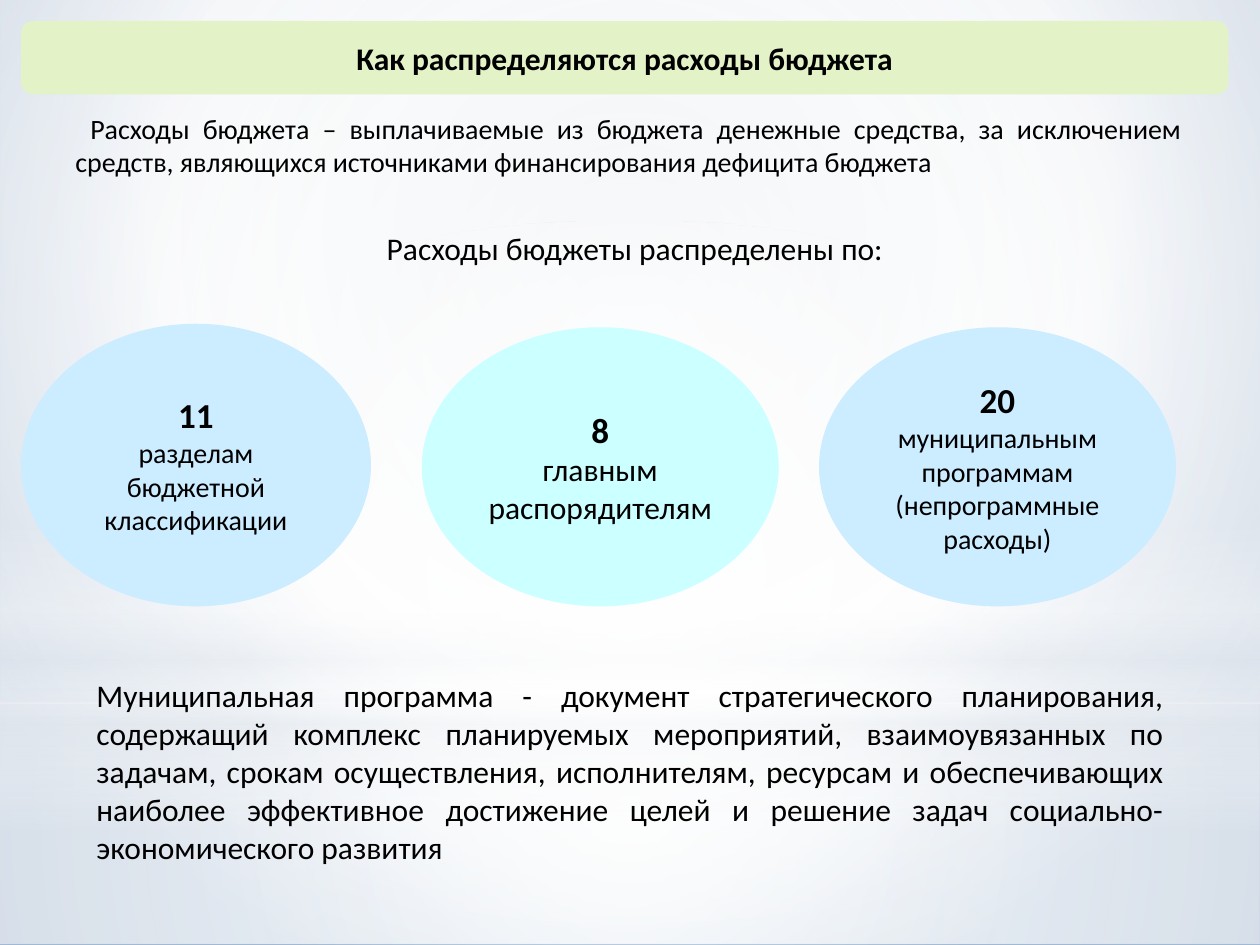
from lxml import etree
from pptx import Presentation
from pptx.dml.color import RGBColor
from pptx.enum import shapes, text
from pptx.oxml import ns
from pptx.util import Pt

BLACK = RGBColor(0x00, 0x00, 0x00)
LIME = RGBColor(0xE3, 0xF2, 0xC7)
SKY = RGBColor(0xCC, 0xEC, 0xFF)
AQUA = RGBColor(0xCC, 0xFF, 0xFF)
WHITE = RGBColor(0xFF, 0xFF, 0xFF)
MIST = RGBColor(0xE4, 0xE9, 0xEF)
HAZE = RGBColor(0xD7, 0xDF, 0xE7)
STEEL = RGBColor(0xA2, 0xB9, 0xD3)

FONT = "Calibri"
SHAPE = shapes.MSO_SHAPE
ALIGN = text.PP_ALIGN
CENTRE = (50, 50, 50, 50)


def set_gradient(fill, owner, stops, focus=CENTRE):
    """Stops are (position %, colour, opacity %); focus None means top to bottom."""
    fill.gradient()
    grad = next(owner.iter(ns.qn("a:gradFill")))
    for child in list(grad):
        grad.remove(child)
    stop_list = etree.SubElement(grad, ns.qn("a:gsLst"))
    for position, colour, opacity in stops:
        stop = etree.SubElement(stop_list, ns.qn("a:gs"), pos=str(position * 1000))
        tint = etree.SubElement(stop, ns.qn("a:srgbClr"), val=str(colour))
        if opacity < 100:
            etree.SubElement(tint, ns.qn("a:alpha"), val=str(opacity * 1000))
    if focus is None:
        etree.SubElement(grad, ns.qn("a:lin"), ang="5400000", scaled="0")
    else:
        circle = etree.SubElement(grad, ns.qn("a:path"), path="circle")
        sides = {side: str(share * 1000) for side, share in zip("ltrb", focus)}
        etree.SubElement(circle, ns.qn("a:fillToRect"), **sides)


def add_plain_shape(slide, kind, box):
    shape = slide.shapes.add_shape(kind, *map(Pt, box))
    shape.shadow.inherit = False
    shape.line.fill.background()
    return shape


def write(frame, lines, align):
    """Lines are (wording, size, bold)."""
    for index, (wording, size, bold) in enumerate(lines):
        paragraph = frame.paragraphs[0] if index == 0 else frame.add_paragraph()
        paragraph.text = wording
        paragraph.alignment = align
        font = paragraph.font
        font.name, font.size, font.bold = FONT, Pt(size), bold
        font.color.rgb = BLACK


def add_backdrop(slide, box):
    left, top, width, height = box
    background = slide.background
    set_gradient(background.fill, slide.element,
                 [(0, HAZE, 100), (60, WHITE, 100), (100, STEEL, 100)], (50, 25, 50, 75))
    # Floor, wall, horizon and central glow: kind, top, height, stops, focus
    layers = [
        (SHAPE.RECTANGLE, 401.75, 137.5,
         [(0, WHITE, 91), (37, WHITE, 76), (100, MIST, 79)], CENTRE),
        (SHAPE.RECTANGLE, 0, 401.75,
         [(0, WHITE, 89), (48, WHITE, 62), (100, MIST, 79)], CENTRE),
        (SHAPE.RECTANGLE, 296.5, 179.5,
         [(0, WHITE, 0), (29, WHITE, 30), (45, MIST, 40), (55, WHITE, 26),
          (65, MIST, 60), (100, WHITE, 0)], None),
        (SHAPE.OVAL, 126, 401.75, [(0, WHITE, 100), (56, WHITE, 0)], CENTRE),
    ]
    for kind, offset, depth, stops, focus in layers:
        layer = add_plain_shape(slide, kind, (left, top + offset, width, depth))
        set_gradient(layer.fill, layer.element, stops, focus)


def add_labelled_shape(slide, kind, box, colour, lines):
    shape = add_plain_shape(slide, kind, box)
    shape.fill.solid()
    shape.fill.fore_color.rgb = colour
    frame = shape.text_frame
    frame.word_wrap = True
    frame.vertical_anchor = text.MSO_ANCHOR.MIDDLE
    write(frame, lines, ALIGN.CENTER)


def add_statement(slide, box, wording, size, align=ALIGN.JUSTIFY, indent=0):
    frame = slide.shapes.add_textbox(*map(Pt, box)).text_frame
    frame.word_wrap = True
    write(frame, [(wording, size, False)], align)
    if indent:
        frame.paragraphs[0]._p.get_or_add_pPr().set("indent", str(Pt(indent)))


def add_distribution(slide, box):
    left, top, width, height = box
    # Left offset, top offset, width, colour, lines
    groups = [
        (0, 0, 200, SKY,
         [("11", 20, True), ("разделам бюджетной классификации", 16, False)]),
        (229, 2, 204, AQUA,
         [("8", 20, True), ("главным распорядителям", 18, False)]),
        (456, 2, 204, SKY,
         [("20", 20, True), ("муниципальным программам", 16, False),
          ("(непрограммные расходы)", 16, False)]),
    ]
    for across, down, oval_width, colour, lines in groups:
        oval = (left + across, top + down, oval_width, height - down)
        add_labelled_shape(slide, SHAPE.OVAL, oval, colour, lines)


def main():
    deck = Presentation()
    deck.slide_width, deck.slide_height = Pt(720), Pt(540)
    slide = deck.slides.add_slide(deck.slide_layouts[6])

    add_backdrop(slide, (0, 0, 719.5, 540))

    # Title banner
    add_labelled_shape(slide, SHAPE.ROUNDED_RECTANGLE, (12, 12, 690, 42), LIME,
                       [("Как распределяются расходы бюджета", 18, True)])

    # Definition of expenditure
    add_statement(slide, (36, 60, 646.5, 47.5),
                  "Расходы бюджета – выплачиваемые из бюджета денежные средства, "
                  "за исключением средств, являющихся источниками финансирования "
                  "дефицита бюджета", 16, indent=8.5)

    # Three ways of distribution
    add_statement(slide, (213.75, 127.5, 298, 29),
                  "Расходы бюджеты распределены по:", 18, ALIGN.CENTER)
    add_distribution(slide, (12, 185, 660, 161.5))

    # Definition of a municipal programme
    add_statement(slide, (48, 383, 624, 115),
                  "Муниципальная программа - документ стратегического планирования, "
                  "содержащий комплекс планируемых мероприятий, взаимоувязанных по "
                  "задачам, срокам осуществления, исполнителям, ресурсам и "
                  "обеспечивающих наиболее эффективное достижение целей и решение "
                  "задач социально-экономического развития", 18)

    deck.save("out.pptx")


if __name__ == "__main__":
    main()
